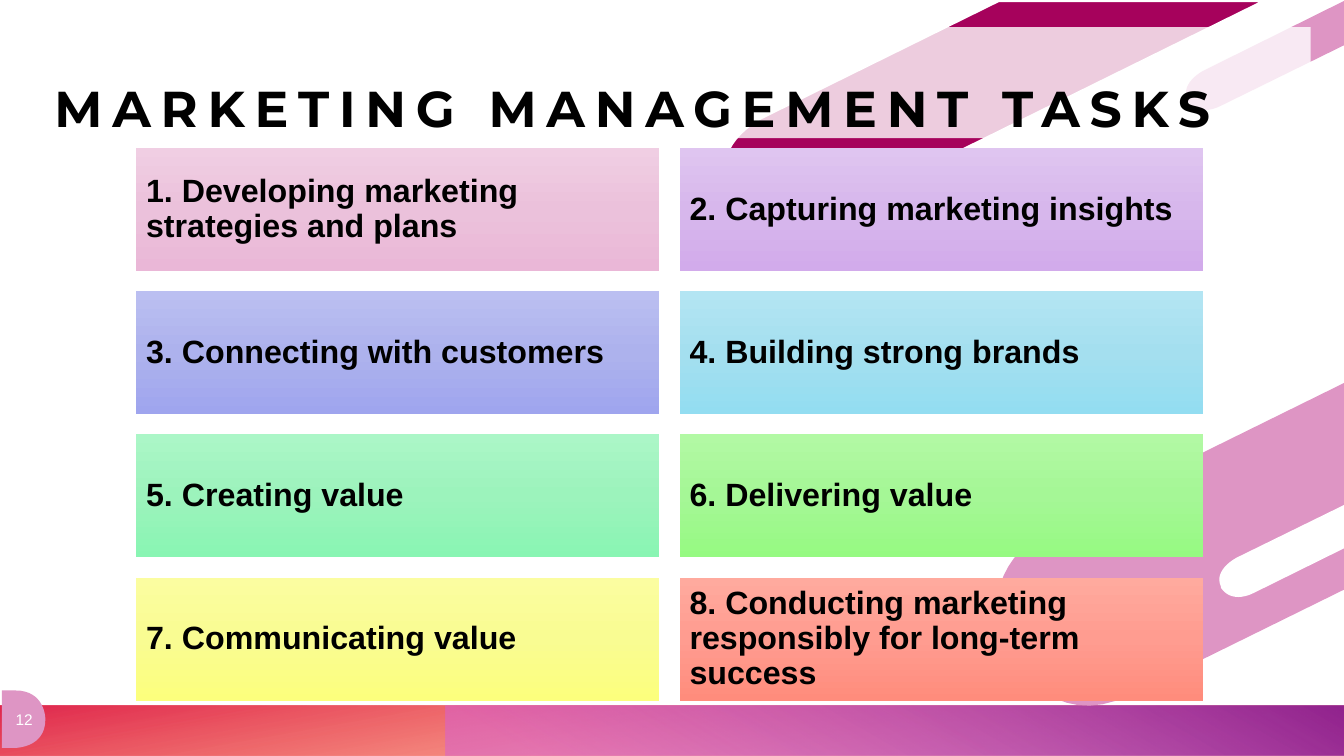
from dataclasses import dataclass
from lxml import etree
from pptx import Presentation
from pptx.dml.color import RGBColor
from pptx.enum.shapes import MSO_SHAPE
from pptx.enum.text import MSO_ANCHOR, MSO_AUTO_SIZE, PP_ALIGN
from pptx.oxml.ns import qn
from pptx.util import Inches, Pt

RECT = MSO_SHAPE.RECTANGLE
LEFT, CENTER = PP_ALIGN.LEFT, PP_ALIGN.CENTER
MIDDLE, BOTTOM = MSO_ANCHOR.MIDDLE, MSO_ANCHOR.BOTTOM
FIXED = MSO_AUTO_SIZE.NONE


@dataclass(frozen=True)
class Theme:
    """Colours, fonts and type sizes of the slide."""
    black: str = "000000"
    white: str = "FFFFFF"
    pink: str = "DE95C4"
    plum: str = "A6025C"
    red: tuple = ((14, "FE4A00", 28), (100, "DA002F", 85))
    violet: tuple = ((9, "D861D4", 55), (99, "92248E", 100))
    head: str = "Montserrat"
    body: str = "Arial"
    big: int = 36
    mid: int = 23
    small: int = 11
    cards: tuple = (
        ("F0CEE3", "EBC1DB", "EAB7D7"), ("DFC5F0", "D7B7EC", "D2ABEB"),
        ("BBBFF1", "ADB2ED", "9FA5EE"), ("B3E5F3", "A4DFEF", "93DDF1"),
        ("ABF6C7", "9CF3BC", "89F5B3"), ("B2F9A4", "A5F796", "96FA82"),
        ("FBFDA0", "F9FC92", "FCFF7D"), ("FFAA9E", "FF9C90", "FF8C7C"))


TASKS = [
    "1. Developing marketing strategies and plans",
    "2. Capturing marketing insights",
    "3. Connecting with customers",
    "4. Building strong brands",
    "5. Creating value",
    "6. Delivering value",
    "7. Communicating value",
    "8. Conducting marketing responsibly for long-term success",
]

LOW = [(13.33, 3.8), (10.41, 5.24), (10.41, 5.24, 9.6, 5.64, 10, 6.45), (10.01, 6.48),
       (10.01, 6.48, 10.41, 7.29, 11.22, 6.89), (13.33, 5.85)]
SLOT = [(13.33, 5.01), (12.27, 5.53), (12.27, 5.53, 12.03, 5.65, 12.11, 5.82),
        (12.11, 5.83), (12.11, 5.83, 12.2, 6, 12.44, 5.88), (13.33, 5.44)]
HIGH = [(13.33, 0.01), (11.94, 0.7), (11.94, 0.7, 11.7, 0.82, 11.78, 0.99),
        (11.78, 1), (11.78, 1, 11.87, 1.17, 12.11, 1.05), (13.33, 0.45)]
BAND = [(9.9, 0), (7.55, 1.16), (7.55, 1.16, 6.97, 1.44, 7.23, 1.97), (7.24, 1.99),
        (7.24, 1.99, 7.5, 2.51, 8.08, 2.22), (12.58, 0)]
TAB = [(0.15, 6.85), (0.02, 6.85), (0.02, 7.42), (0.15, 7.42),
       (0.15, 7.42, 0.45, 7.42, 0.45, 7.14), (0.45, 7.13),
       (0.45, 7.13, 0.45, 6.85, 0.15, 6.85)]


def trace(parts, steps=16):
    """Turn points and cubic curves into a list of points."""
    dots = []
    for part in parts:
        if len(part) == 2:
            dots.append(part)
            continue
        ends = [dots[-1], part[:2], part[2:4], part[4:]]
        for i in range(1, steps + 1):
            t = i / steps
            mix = ((1 - t) ** 3, 3 * t * (1 - t) ** 2, 3 * t * t * (1 - t), t ** 3)
            dots.append(tuple(sum(m * e[k] for m, e in zip(mix, ends)) for k in (0, 1)))
    return [(Inches(x), Inches(y)) for x, y in dots]


class Deck:
    """Holds the theme and the current slide."""

    def __init__(self, theme):
        """Open a wide deck with one titled slide."""
        self.theme = theme
        self.prs = Presentation()
        self.prs.slide_width, self.prs.slide_height = Inches(13.33), Inches(7.5)
        self.slide = self.prs.slides.add_slide(self.prs.slide_layouts[5])
        self.shapes = self.slide.shapes

    def paint(self, shape, color, alpha=100):
        """Give a shape a plain fill."""
        shape.fill.solid()
        shape.fill.fore_color.rgb = RGBColor.from_string(color)
        if alpha < 100:
            tint = shape._element.spPr.find(".//" + qn("a:srgbClr"))
            etree.SubElement(tint, qn("a:alpha"), val=str(alpha * 1000))

    def blend(self, shape, stops, angle):
        """Give a shape a linear gradient."""
        shape.fill.gradient()
        grad = shape._element.spPr.find(qn("a:gradFill"))
        for child in list(grad):
            grad.remove(child)
        row = etree.SubElement(grad, qn("a:gsLst"))
        for pos, color, alpha in stops:
            stop = etree.SubElement(row, qn("a:gs"), pos=str(pos * 1000))
            tint = etree.SubElement(stop, qn("a:srgbClr"), val=color)
            if alpha < 100:
                etree.SubElement(tint, qn("a:alpha"), val=str(alpha * 1000))
        etree.SubElement(grad, qn("a:lin"), ang=str(angle * 60000), scaled="0")

    def block(self, box, stops, angle):
        """Add a rectangle with a gradient and no line."""
        shape = self.shapes.add_shape(RECT, *map(Inches, box))
        shape.shadow.inherit = False
        shape.line.fill.background()
        self.blend(shape, stops, angle)
        return shape

    def strip(self, box, stops, angle, turn=0):
        """Add a mirrored footer strip."""
        shape = self.block(box, stops, angle)
        shape.rotation = turn
        shape._element.spPr.find(qn("a:xfrm")).set("flipH", "1")

    def curve(self, parts, color, edge=None):
        """Add a filled outline, with an edge if a colour is given."""
        dots = trace(parts)
        pen = self.shapes.build_freeform(*dots[0])
        pen.add_line_segments(dots[1:], close=True)
        shape = pen.convert_to_shape()
        shape.shadow.inherit = False
        self.paint(shape, color)
        if edge:
            shape.line.color.rgb = RGBColor.from_string(edge)
            shape.line.width = Pt(3.2)
        else:
            shape.line.fill.background()

    def fit(self, shape, text, size, color, pad, face, bold=True, align=LEFT, anchor=MIDDLE):
        """Set one styled paragraph in a shape."""
        frame = shape.text_frame
        frame.word_wrap = True
        frame.auto_size = FIXED
        frame.vertical_anchor = anchor
        frame.margin_left = frame.margin_right = Inches(pad)
        frame.margin_top = frame.margin_bottom = Inches(pad)
        para = frame.paragraphs[0]
        para.text = text
        para.alignment = align
        font = para.font
        font.name, font.size, font.bold = face, Pt(size), bold
        font.color.rgb = RGBColor.from_string(color)
        return para

    def title(self, text, box):
        """Place the title above the shapes added so far."""
        look, shape = self.theme, self.shapes.title
        shape.left, shape.top, shape.width, shape.height = map(Inches, box)
        self.paint(shape, look.white, 80)
        para = self.fit(shape, text, look.big, look.black, 0, look.head, anchor=BOTTOM)
        para.runs[0].font._element.set("spc", "700")
        tree = shape._element.getparent()
        tree.append(shape._element)

    def card(self, box, text, colors):
        """Add a task card."""
        look = self.theme
        stops = [(pos, color, 100) for pos, color in zip((0, 50, 100), colors)]
        shape = self.block(box, stops, 90)
        para = self.fit(shape, text, look.mid, look.black, 0.1, look.body)
        para.line_spacing = 0.9

    def label(self, box, text):
        """Add a small centred label."""
        look = self.theme
        shape = self.shapes.add_textbox(*map(Inches, box))
        self.fit(shape, text, look.small, look.white, 0.05, look.body, False, CENTER)


def main():
    """Build and save the slide."""
    look = Theme()
    deck = Deck(look)
    deck.strip((0, 7, 13.33, 0.5), look.red, 100, 180)
    deck.strip((4.42, 7, 8.92, 0.5), look.violet, 240)
    for parts, color in ((LOW, look.pink), (SLOT, look.white), (HIGH, look.pink)):
        deck.curve(parts, color)
    deck.curve(BAND, look.plum, look.white)
    deck.curve(TAB, look.pink)
    deck.title("MARKETING MANAGEMENT TASKS", (0.54, 0.27, 12.46, 1.1))
    for i, (text, colors) in enumerate(zip(TASKS, look.cards)):
        row, col = divmod(i, 2)
        deck.card((1.35 + 5.39 * col, 1.47 + 1.42 * row, 5.19, 1.22), text, colors)
    deck.label((0, 6.94, 0.48, 0.4), "12")
    deck.prs.save("out.pptx")


if __name__ == "__main__":
    main()
